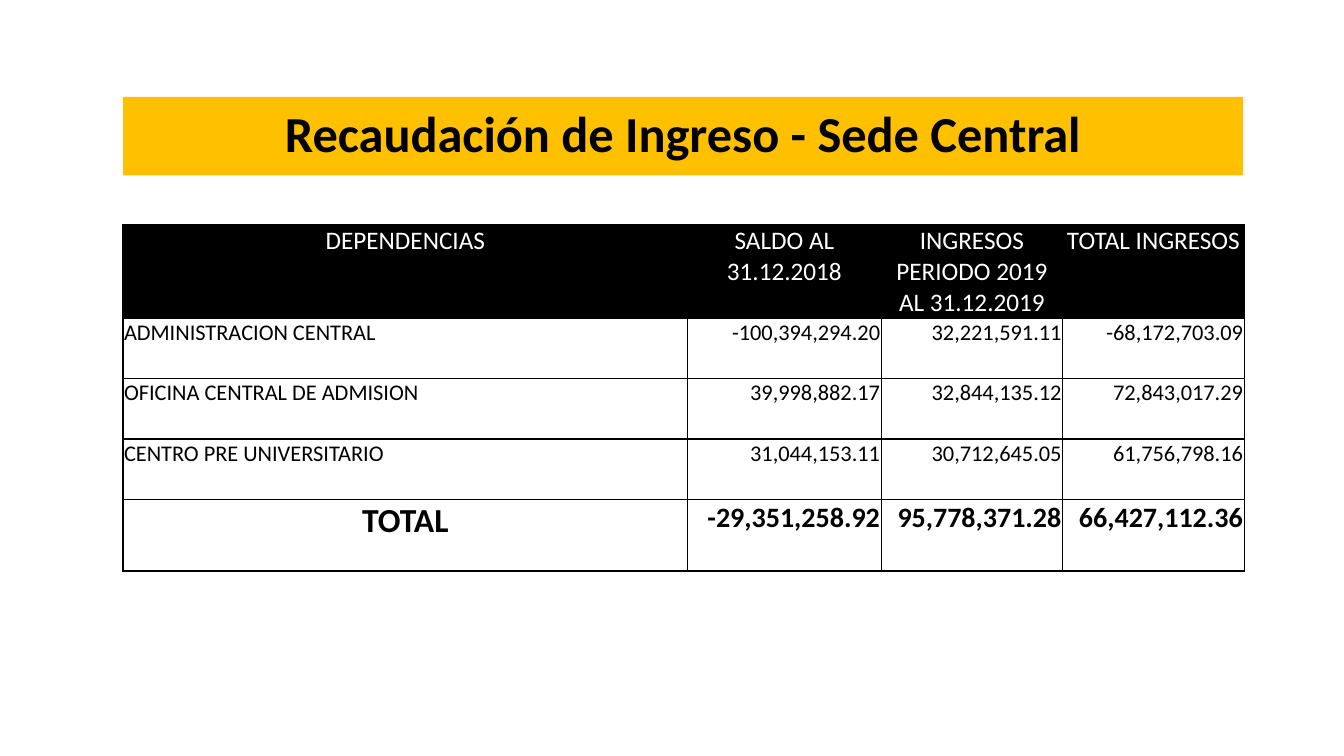
from lxml import etree
from pptx import Presentation
from pptx import util as u
from pptx.dml.color import RGBColor
from pptx.enum import shapes, text
from pptx.oxml import ns

BLACK = RGBColor(0x00, 0x00, 0x00)
WHITE = RGBColor(0xFF, 0xFF, 0xFF)
AMBER = RGBColor(0xFF, 0xC0, 0x00)
LEFT, CENTER, RIGHT = (text.PP_ALIGN.LEFT, text.PP_ALIGN.CENTER,
                       text.PP_ALIGN.RIGHT)

HEADERS = ["DEPENDENCIAS", "SALDO AL 31.12.2018",
           "INGRESOS PERIODO 2019 AL 31.12.2019", "TOTAL INGRESOS"]
INCOME = [
    ["ADMINISTRACION CENTRAL", "-100,394,294.20", "32,221,591.11", "-68,172,703.09"],
    ["OFICINA CENTRAL DE ADMISION", "39,998,882.17", "32,844,135.12", "72,843,017.29"],
    ["CENTRO PRE UNIVERSITARIO", "31,044,153.11", "30,712,645.05", "61,756,798.16"],
]
TOTALS = ["TOTAL", "-29,351,258.92", "95,778,371.28", "66,427,112.36"]


class Deck:
    font = "Calibri"

    def __init__(self, prs):
        self.s = prs.slides.add_slide(prs.slide_layouts[6])

    def label(self, p, words, size, color, align, bold=False):
        p.text = words
        p.alignment = align
        p.font.name = self.font
        p.font.size = u.Pt(size)
        p.font.bold = bold
        p.font.color.rgb = color

    def banner(self, words, *box):
        sp = self.s.shapes.add_shape(shapes.MSO_SHAPE.RECTANGLE,
                                     *map(u.Inches, box))
        sp.shadow.inherit = False
        sp.fill.solid()
        sp.fill.fore_color.rgb = AMBER
        sp.line.fill.background()
        tf = sp.text_frame
        tf.word_wrap = True
        tf.vertical_anchor = text.MSO_ANCHOR.MIDDLE
        p = tf.paragraphs[0]
        p.line_spacing = 0.9
        self.label(p, words, 36, BLACK, CENTER, True)

    def border(self, cell):
        tc_pr = cell._tc.get_or_add_tcPr()
        for side in "LRTB":
            ln = etree.SubElement(tc_pr, ns.qn(f"a:ln{side}"), w=str(u.Pt(1)))
            fill = etree.SubElement(ln, ns.qn("a:solidFill"))
            etree.SubElement(fill, ns.qn("a:srgbClr"), val=str(BLACK))

    def cell(self, cell, words, size, color, align, bold=False, fill=None):
        cell.margin_left = cell.margin_right = cell.margin_top = u.Inches(0.01)
        cell.margin_bottom = 0
        self.border(cell)
        if fill is None:
            cell.fill.background()
        else:
            cell.fill.solid()
            cell.fill.fore_color.rgb = fill
        self.label(cell.text_frame.paragraphs[0], words, size, color, align, bold)

    def table(self, left, top, widths, heights):
        box = left, top, sum(widths), sum(heights)
        table = self.s.shapes.add_table(len(heights), len(widths),
                                        *map(u.Inches, box)).table
        for column, width in zip(table.columns, widths):
            column.width = u.Inches(width)
        for row, height in zip(table.rows, heights):
            row.height = u.Inches(height)
        return table

    def income_table(self, left, top, widths, heights):
        table = self.table(left, top, widths, heights)
        last = len(heights) - 1
        for i, row in enumerate([HEADERS, *INCOME, TOTALS]):
            for j, words in enumerate(row):
                cell = table.cell(i, j)
                if i == 0:
                    self.cell(cell, words, 18, WHITE, CENTER, fill=BLACK)
                elif i == last:
                    size, align = (20, RIGHT) if j else (24, CENTER)
                    self.cell(cell, words, size, BLACK, align, True)
                else:
                    self.cell(cell, words, 16, BLACK, RIGHT if j else LEFT)


def main():
    prs = Presentation()
    prs.slide_width, prs.slide_height = u.Inches(13.33), u.Inches(7.5)
    deck = Deck(prs)
    deck.banner("Recaudación de Ingreso - Sede Central", 1.22, 0.96, 11.11, 0.78)
    deck.income_table(1.22, 2.23, [5.6, 1.92, 1.8, 1.8],
                      [0.92, 0.6, 0.6, 0.6, 0.71])
    prs.save("out.pptx")


if __name__ == "__main__":
    main()
